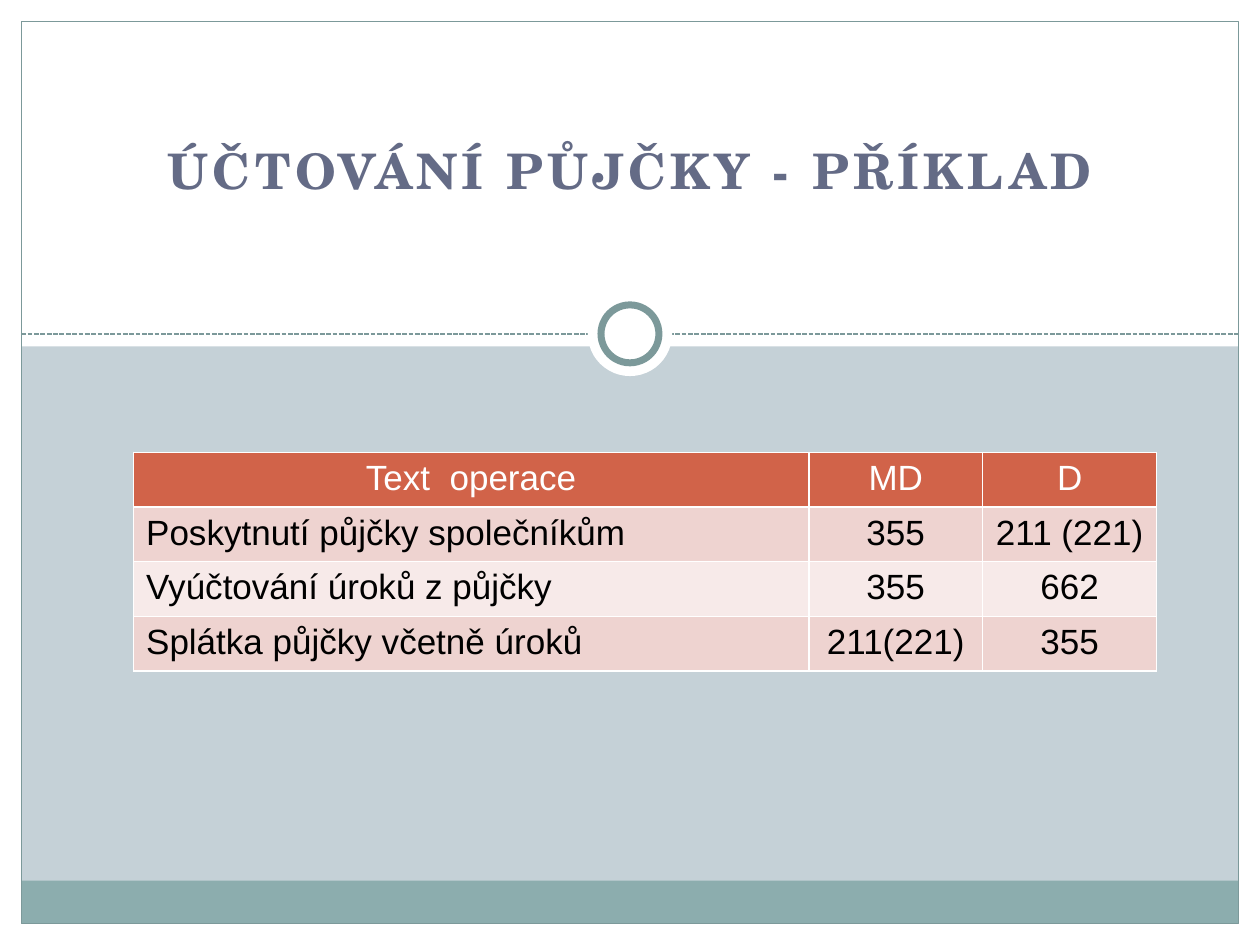
from lxml import etree
from pptx import Presentation
from pptx.dml.color import RGBColor
from pptx.enum.dml import MSO_LINE
from pptx.enum.shapes import MSO_CONNECTOR, MSO_SHAPE
from pptx.enum.text import MSO_ANCHOR, PP_ALIGN
from pptx.oxml.ns import qn
from pptx.util import Inches, Pt

RECT, OVAL = MSO_SHAPE.RECTANGLE, MSO_SHAPE.OVAL
LINE, DASH = MSO_CONNECTOR.STRAIGHT, MSO_LINE.SQUARE_DOT
LEFT, MID, TOP = PP_ALIGN.LEFT, PP_ALIGN.CENTER, MSO_ANCHOR.TOP

COLS, ROWS, UNIT = 100, 75, 0.1
EDGE = 1.7
RULE = 26.5
HUES = {
    "white": "FFFFFF", "black": "000000", "back": "C5D1D7",
    "teal": "8CADAE", "rim": "7C999A", "title": "646B86",
    "head": "D16349", "odd": "EED3D0", "even": "F7EAE9",
}
TABLE = [
    ["Text  operace", "MD", "D"],
    ["Poskytnutí půjčky společníkům", "355", "211 (221)"],
    ["Vyúčtování úroků z půjčky", "355", "662"],
    ["Splátka půjčky včetně úroků", "211(221)", "355"],
]
SHARES = [0.66, 0.17, 0.17]


def grid(*units):
    return [Inches(unit * UNIT) for unit in units]


def hue(name):
    return RGBColor.from_string(HUES[name])


def write(frame, text, size=20, font="Arial", color="black", bold=False, align=LEFT, gap=0):
    para = frame.paragraphs[0]
    para.alignment = align
    run = para.add_run()
    run.text = text
    run.font.size = Pt(size)
    run.font.name = font
    run.font.bold = bold
    run.font.color.rgb = hue(color)
    if gap:
        run.font._element.set("spc", str(int(gap * 100)))


def draw(slide, kind, box, fill=None, rim=None, width=1):
    shape = slide.shapes.add_shape(kind, *grid(*box))
    shape.shadow.inherit = False
    if fill:
        shape.fill.solid()
        shape.fill.fore_color.rgb = hue(fill)
    else:
        shape.fill.background()
    if rim:
        shape.line.color.rgb = hue(rim)
        shape.line.width = Pt(width)
    else:
        shape.line.fill.background()


def add_rule(slide, left, right, row):
    rule = slide.shapes.add_connector(LINE, *grid(left, row, right, row))
    rule.line.color.rgb = hue("rim")
    rule.line.width = Pt(0.9)
    rule.line.dash_style = DASH
    etree.SubElement(rule._element.spPr, qn("a:effectLst"))


def add_ring(slide, x, y):
    for size, fill, rim in [(6.7, "white", None), (4.6, "white", "rim")]:
        draw(slide, OVAL, (x - size / 2, y - size / 2, size, size), fill, rim, 4)


def add_frame(slide, box):
    left, top, width, height = box
    right, base = left + width, top + height
    bands = [(0, base, COLS, ROWS - base), (right, 0, COLS - right, ROWS),
             (0, 0, left, ROWS), (0, 0, COLS, 27.5)]
    for band in bands:
        draw(slide, RECT, band, "white")
    draw(slide, RECT, (left, base - 3.4, width, 3.4), "teal")
    add_rule(slide, left, right, RULE)
    draw(slide, RECT, box, rim="rim", width=0.75)
    add_ring(slide, COLS / 2, RULE)


def add_title(slide, box, text):
    frame = slide.shapes.add_textbox(*grid(*box)).text_frame
    frame.word_wrap = True
    frame.vertical_anchor = TOP
    write(frame, text, size=28, font="TeX Gyre Schola", color="title",
          bold=True, align=MID, gap=2.5)


def add_edges(cell):
    props = cell._tc.get_or_add_tcPr()
    for side in ("lnL", "lnR", "lnT", "lnB"):
        line = etree.SubElement(props, qn("a:" + side), w=str(Pt(1)))
        fill = etree.SubElement(line, qn("a:solidFill"))
        etree.SubElement(fill, qn("a:srgbClr"), val=HUES["white"])


def add_grid(slide, box, data):
    table = slide.shapes.add_table(len(data), len(data[0]), *grid(*box)).table
    for col, share in zip(table.columns, SHARES):
        col.width = grid(box[2] * share)[0]
    for r, row in enumerate(data):
        fill = "head" if r == 0 else "odd" if r % 2 else "even"
        for c, text in enumerate(row):
            cell = table.cell(r, c)
            add_edges(cell)
            cell.fill.solid()
            cell.fill.fore_color.rgb = hue(fill)
            write(cell.text_frame, text, color="black" if r else "white",
                  align=LEFT if r and c == 0 else MID)


def main():
    deck = Presentation()
    deck.slide_width, deck.slide_height = grid(COLS, ROWS)
    slide = deck.slides.add_slide(deck.slide_layouts[6])
    slide.background.fill.solid()
    slide.background.fill.fore_color.rgb = hue("back")
    add_frame(slide, (EDGE, EDGE, COLS - 2 * EDGE, ROWS - 2 * EDGE))
    add_title(slide, (2, 10.7, 96, 12.6), "ÚČTOVÁNÍ PŮJČKY - PŘÍKLAD")
    add_grid(slide, (10.6, 35.9, 81.2, 16.4), TABLE)
    deck.save("out.pptx")


if __name__ == "__main__":
    main()
